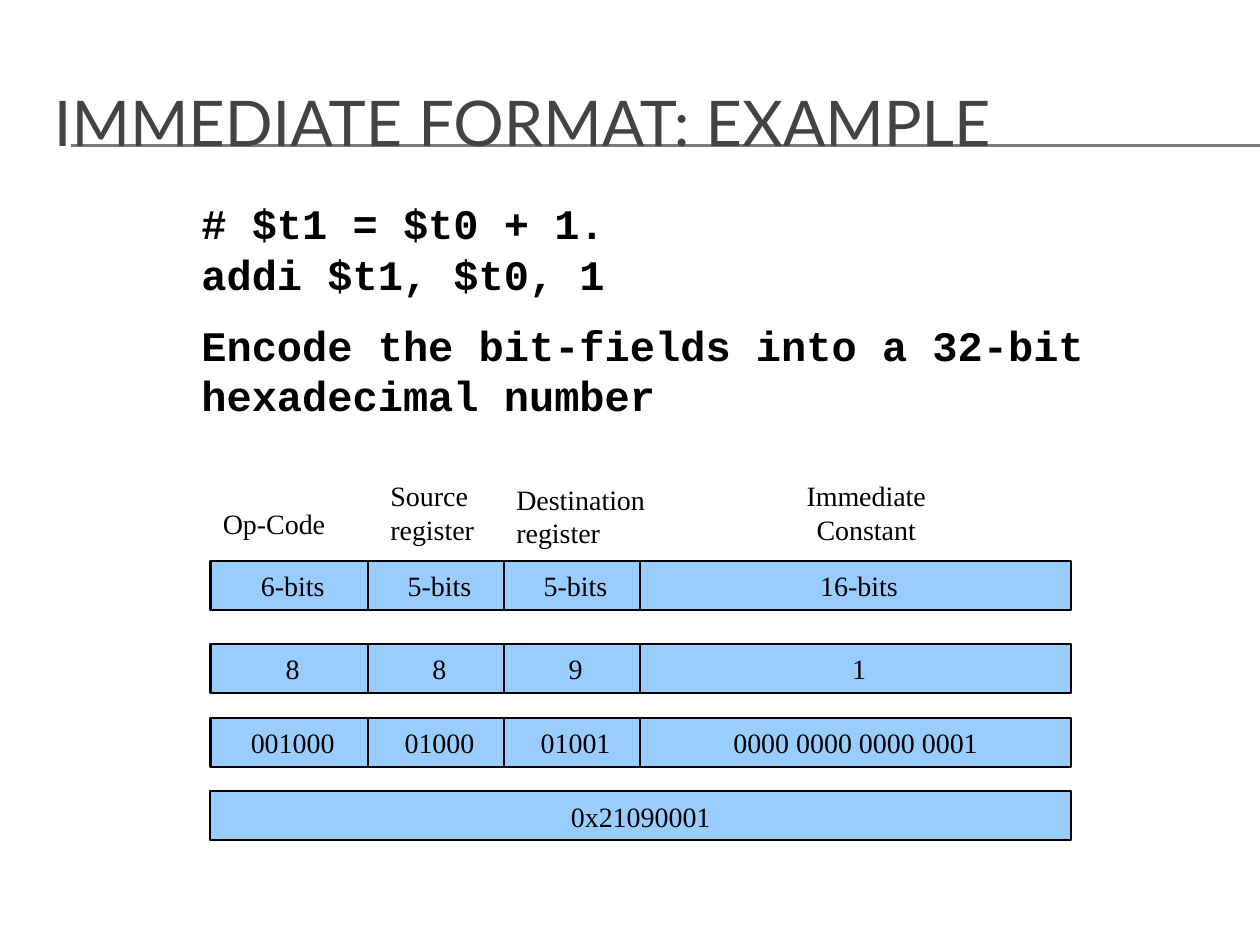
from dataclasses import dataclass
from itertools import accumulate

from pptx import Presentation
from pptx.dml.color import RGBColor
from pptx.enum.shapes import MSO_CONNECTOR, MSO_SHAPE
from pptx.enum.text import MSO_ANCHOR, PP_ALIGN
from pptx.oxml.ns import qn
from pptx.util import Inches, Pt
from lxml.etree import SubElement


@dataclass(frozen=True)
class Theme:
    title_font: str = "Lato"
    code_font: str = "Courier New"
    field_font: str = "Times New Roman"
    title_size: int = 36
    code_size: int = 24
    field_size: int = 16
    title_color: str = "434342"
    text_color: str = "000000"
    rule_color: str = "797B7E"
    field_fill: str = "99CCFF"


THEME = Theme()

TITLE = "IMMEDIATE FORMAT: EXAMPLE"
CODE = [
    "# $t1 = $t0 + 1.",
    "addi\t$t1, $t0, 1",
    "Encode the bit-fields into a 32-bit hexadecimal number",
]
HEADINGS = [
    ("Op-Code", (1.67, 3.97, 1.25, 0.37), PP_ALIGN.LEFT),
    ("Source register", (3, 3.75, 0.92, 0.64), PP_ALIGN.LEFT),
    ("Destination register", (4, 3.78, 1.33, 0.64), PP_ALIGN.LEFT),
    ("Immediate Constant", (6, 3.75, 1.75, 0.64), PP_ALIGN.CENTER),
]
FIELD_ROWS = [
    (4.45, [" 6-bits", " 5-bits", " 5-bits", " 16-bits"]),
    (5.11, [" 8", " 8", " 9", " 1"]),
    (5.7, [" 001000", " 01000", " 01001", " 0000 0000 0000 0001 "]),
    (6.28, ["0x21090001"]),
]
FIELD_WIDTHS = [1.25, 1.08, 1.08, 3.42]
FIELD_LEFT = 1.67
FIELD_HEIGHT = 0.39
RULE_TOPS = [1.15, 1.16]


def write(shape, lines, font, size, color, align=PP_ALIGN.LEFT,
          anchor=MSO_ANCHOR.TOP, bold=False):
    frame = shape.text_frame
    frame.word_wrap = True
    frame.vertical_anchor = anchor
    frame.text = "\n".join(lines)
    for paragraph in frame.paragraphs:
        paragraph.alignment = align
        paragraph.font.name = font
        paragraph.font.size = Pt(size)
        paragraph.font.bold = bold
        paragraph.font.color.rgb = RGBColor.from_string(color)
    return frame


def add_text(slide, box, lines, *style, **options):
    textbox = slide.shapes.add_textbox(*map(Inches, box))
    return write(textbox, lines, *style, **options)


def add_rule(slide, top):
    rule = slide.shapes.add_connector(
        MSO_CONNECTOR.STRAIGHT, Inches(0.56), Inches(top), Inches(10), Inches(top))
    rule.line.color.rgb = RGBColor.from_string(THEME.rule_color)
    rule.line.width = Pt(0.75)
    SubElement(rule._element.spPr, qn("a:effectLst"))


def add_field(slide, box, value):
    field = slide.shapes.add_shape(MSO_SHAPE.RECTANGLE, *map(Inches, box))
    field.shadow.inherit = False
    field.fill.solid()
    field.fill.fore_color.rgb = RGBColor.from_string(THEME.field_fill)
    field.line.color.rgb = RGBColor.from_string(THEME.text_color)
    field.line.width = Pt(1.25)
    write(field, [value], THEME.field_font, THEME.field_size, THEME.text_color,
          align=PP_ALIGN.CENTER, anchor=MSO_ANCHOR.MIDDLE)


def main():
    deck = Presentation()
    deck.slide_width, deck.slide_height = Inches(10), Inches(7.5)
    slide = deck.slides.add_slide(deck.slide_layouts[6])

    for top in RULE_TOPS:
        add_rule(slide, top)
    add_text(slide, (0.33, 0.5, 9.5, 0.92), [TITLE], THEME.title_font,
             THEME.title_size, THEME.title_color, anchor=MSO_ANCHOR.MIDDLE)
    code = add_text(slide, (1.5, 1.52, 7.33, 1.9), CODE, THEME.code_font,
                    THEME.code_size, THEME.text_color, bold=True)
    code.paragraphs[-1].space_before = Pt(THEME.code_size / 2)

    for heading, box, align in HEADINGS:
        add_text(slide, box, [heading], THEME.field_font, THEME.field_size,
                 THEME.text_color, align=align)

    for top, values in FIELD_ROWS:
        widths = FIELD_WIDTHS if len(values) > 1 else [sum(FIELD_WIDTHS)]
        lefts = accumulate(widths, initial=FIELD_LEFT)
        for left, width, value in zip(lefts, widths, values):
            add_field(slide, (left, top, width, FIELD_HEIGHT), value)

    deck.save("out.pptx")


if __name__ == "__main__":
    main()
